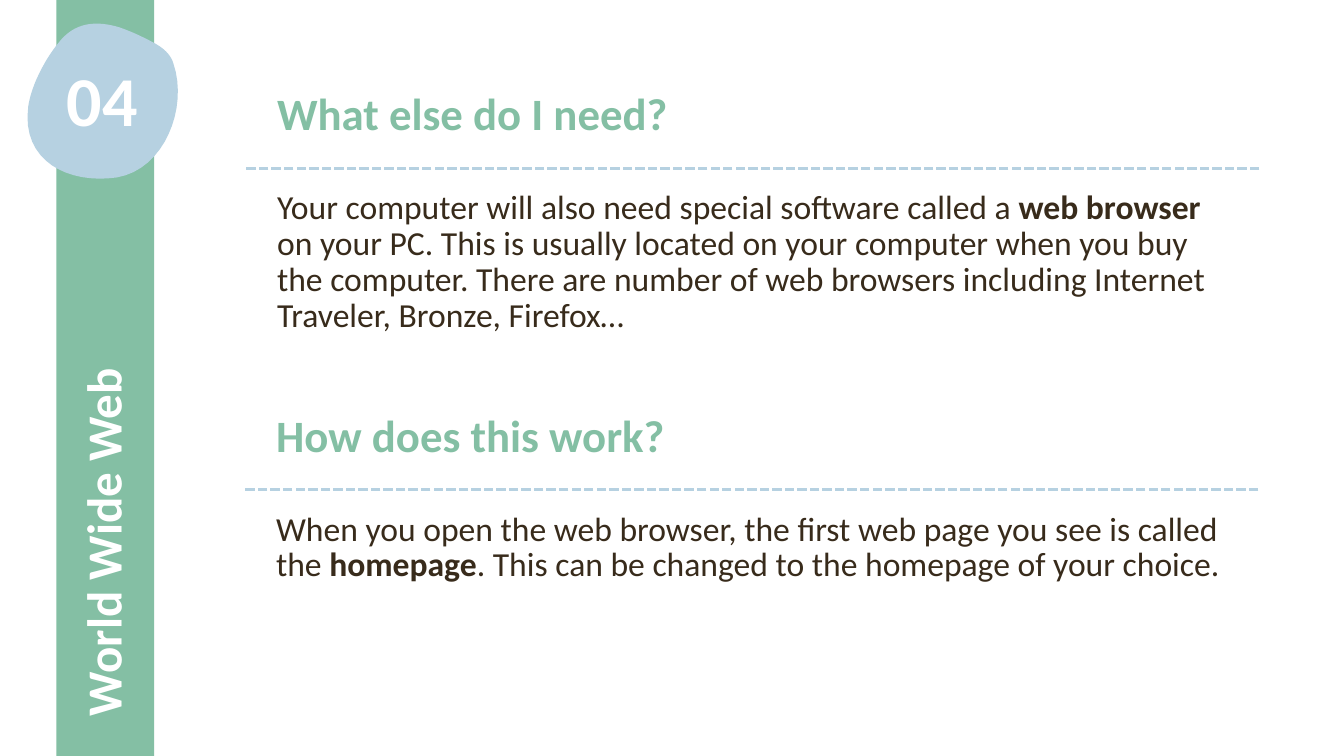
from dataclasses import dataclass

from lxml.etree import SubElement
from pptx import Presentation
from pptx.dml.color import RGBColor
from pptx.enum.dml import MSO_LINE
from pptx.enum.shapes import MSO_CONNECTOR, MSO_SHAPE
from pptx.enum.text import MSO_ANCHOR, MSO_AUTO_SIZE, PP_ALIGN
from pptx.oxml.ns import qn
from pptx.util import Inches, Pt

CHAPTER_NUMBER = "04"
CHAPTER_TITLE = "World Wide Web"
# Each body is a list of (text, bold) pieces.
SECTIONS = [
    {
        "left": 2.63, "top": 0.98,
        "heading": "What else do I need?",
        "body": [
            ("Your computer will also need special software called a ", False),
            ("web browser ", True),
            ("on your PC. This is usually located on your computer when you buy "
             "the computer. There are number of web browsers including Internet "
             "Traveler, Bronze, Firefox…", False),
        ],
    },
    {
        "left": 2.62, "top": 4.17,
        "heading": "How does this work?",
        "body": [
            ("When you open the web browser, the first web page you see is "
             "called the ", False),
            ("homepage", True),
            (". This can be changed to the homepage of your choice.", False),
        ],
    },
]
BLOB_START = (1.18, 0.27)
# Each curve: two control points and an end point, in inches.
BLOB_CURVES = [
    ((0.98, 0.21), (0.77, 0.21), (0.61, 0.39)),
    ((0.46, 0.56), (0.31, 0.84), (0.28, 1.06)),
    ((0.21, 1.6), (0.68, 1.83), (1.16, 1.76)),
    ((1.63, 1.68), (1.87, 1.07), (1.72, 0.63)),
    ((1.68, 0.5), (1.56, 0.44), (1.44, 0.38)),
    ((1.36, 0.34), (1.27, 0.3), (1.18, 0.27)),
]
CURVE_STEPS = 16


@dataclass(frozen=True)
class Theme:
    font: str = "Calibri"
    green: RGBColor = RGBColor(0x84, 0xBF, 0xA4)
    blue: RGBColor = RGBColor(0xB6, 0xD1, 0xE1)
    brown: RGBColor = RGBColor(0x38, 0x2B, 0x1B)
    white: RGBColor = RGBColor(0xFF, 0xFF, 0xFF)
    body_size: Pt = Pt(24)
    heading_size: Pt = Pt(32)
    title_size: Pt = Pt(35)
    number_size: Pt = Pt(50)
    section_spacing: Pt = Pt(25.6)
    title_spacing: Pt = Pt(40.2)
    rule_width: Pt = Pt(2.25)


THEME = Theme()


def place(shape, left, top, width, height):
    shape.left, shape.top = Inches(left), Inches(top)
    shape.width, shape.height = Inches(width), Inches(height)


def write(shape, pieces, size, color, spacing, align=PP_ALIGN.LEFT, indent=0):
    """Fill a shape with one paragraph made of (text, bold) pieces."""
    frame = shape.text_frame
    frame.word_wrap = True
    frame.auto_size = MSO_AUTO_SIZE.NONE
    frame.vertical_anchor = MSO_ANCHOR.TOP
    paragraph = frame.paragraphs[0]
    paragraph.alignment = align
    paragraph.line_spacing = spacing
    paragraph.space_before = Pt(0)
    if indent:
        paragraph._p.get_or_add_pPr().set("marL", str(Inches(indent)))
    for text, bold in pieces:
        run = paragraph.add_run()
        run.text = text
        run.font.name, run.font.size, run.font.bold = THEME.font, size, bold
        run.font.color.rgb = color


def add_text(slide, box, *args, **kwargs):
    textbox = slide.shapes.add_textbox(*map(Inches, box))
    write(textbox, *args, **kwargs)


def paint(shape, color):
    shape.shadow.inherit = False
    shape.fill.solid()
    shape.fill.fore_color.rgb = color
    shape.line.fill.background()


def blob_points():
    """Sample the cubic curves of the blob as a list of points."""
    points, start = [], BLOB_START
    for first, second, end in BLOB_CURVES:
        for step in range(1, CURVE_STEPS + 1):
            t = step / CURVE_STEPS
            u = 1 - t
            points.append(tuple(
                Inches(u**3 * a + 3 * u * u * t * b + 3 * u * t * t * c + t**3 * d)
                for a, b, c, d in zip(start, first, second, end)))
        start = end
    return points


def add_sidebar(slide):
    band = slide.shapes.add_shape(
        MSO_SHAPE.RECTANGLE, Inches(0.56), 0, Inches(0.97), Inches(7.5))
    paint(band, THEME.green)

    outline = slide.shapes.build_freeform(*map(Inches, BLOB_START))
    outline.add_line_segments(blob_points(), close=True)
    paint(outline.convert_to_shape(), THEME.blue)
    add_text(slide, (0.17, 0.61, 1.69, 0.94), [(CHAPTER_NUMBER, True)],
             THEME.number_size, THEME.white, 0.9, align=PP_ALIGN.CENTER)

    title = slide.shapes.title
    place(title, -3.15, 2.65, 8.4, 0.71)
    title.rotation = 270
    write(title, [(CHAPTER_TITLE, True)], THEME.title_size, THEME.white,
          THEME.title_spacing)
    slide.shapes._spTree.append(title._element)  # bring in front of the band


def add_section(slide, section):
    left, top = section["left"], section["top"]
    add_text(slide, (left, top, 9.46, 0.49), [(section["heading"], True)],
             THEME.heading_size, THEME.green, THEME.section_spacing, indent=0.02)

    rule_left, rule_top = Inches(left - 0.19), Inches(top + 0.69)
    rule = slide.shapes.add_connector(
        MSO_CONNECTOR.STRAIGHT, rule_left + Inches(10.05), rule_top,
        rule_left, rule_top)
    rule.line.color.rgb = THEME.blue
    rule.line.width = THEME.rule_width
    rule.line.dash_style = MSO_LINE.SQUARE_DOT  # stored as sysDash
    SubElement(rule._element.spPr, qn("a:effectLst"))
    rule.line._ln.find(qn("a:prstDash")).set("val", "sysDash")

    add_text(slide, (left, top + 0.86, 9.67, 1.74), section["body"],
             THEME.body_size, THEME.brown, THEME.section_spacing, indent=0.02)


def main():
    deck = Presentation()
    deck.slide_width, deck.slide_height = Inches(13.33), Inches(7.5)
    slide = deck.slides.add_slide(deck.slide_layouts[5])
    add_sidebar(slide)
    for section in SECTIONS:
        add_section(slide, section)
    deck.save("out.pptx")


if __name__ == "__main__":
    main()
